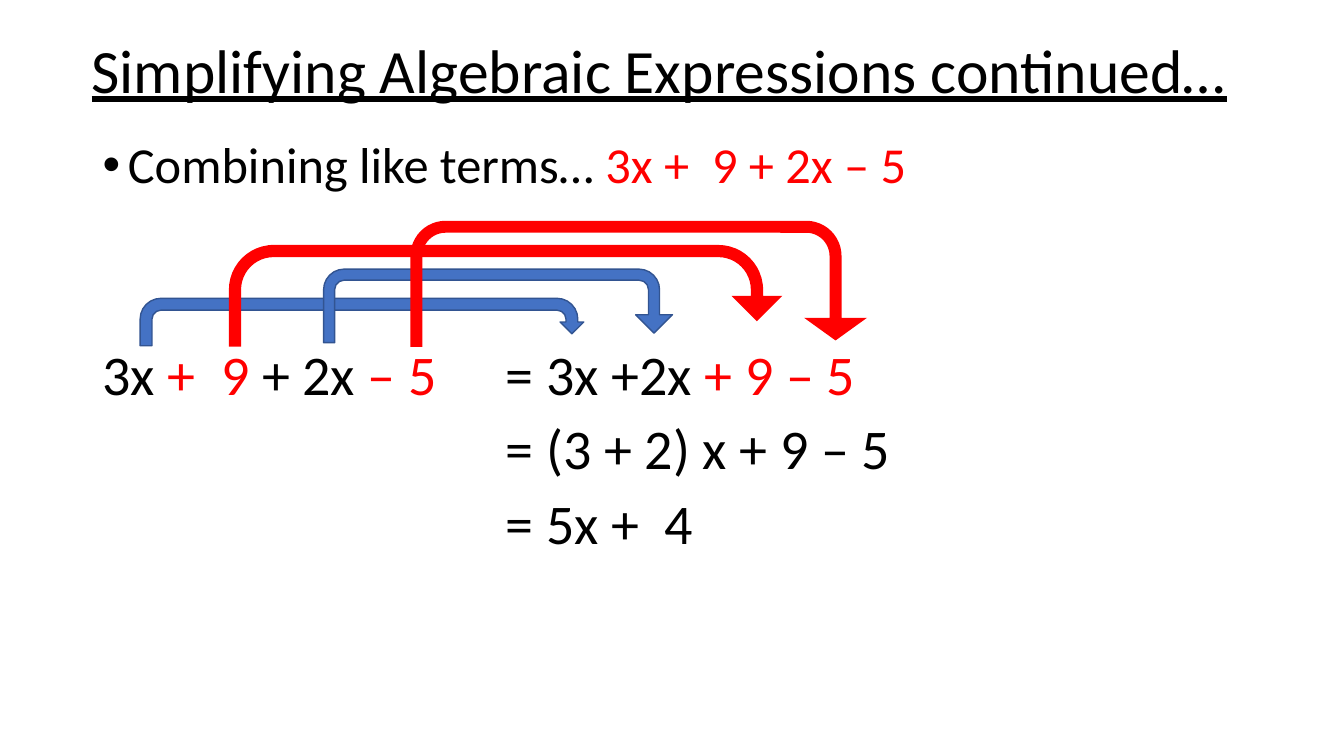
from dataclasses import dataclass

from lxml import etree
from pptx import Presentation
from pptx.dml.color import RGBColor
from pptx.enum.shapes import MSO_SHAPE
from pptx.enum.text import MSO_ANCHOR, PP_ALIGN
from pptx.oxml.ns import qn
from pptx.util import Inches, Pt

UTURN = MSO_SHAPE.U_TURN_ARROW
TOP = MSO_ANCHOR.TOP
MIDDLE = MSO_ANCHOR.MIDDLE
LEFT = PP_ALIGN.LEFT

BLACK = RGBColor(0x00, 0x00, 0x00)
RED = RGBColor(0xFF, 0x00, 0x00)
BLUE = RGBColor(0x44, 0x72, 0xC4)
DARK_BLUE = RGBColor(0x32, 0x54, 0x91)

EQUALS_TAB = Inches(4)
BULLET_INDENT = Inches(0.25)


@dataclass(frozen=True)
class Line:
    terms: tuple[tuple[str, RGBColor], ...]
    size: int
    before: int = 10
    bulleted: bool = False
    underline: bool = False


@dataclass(frozen=True)
class TermArrow:
    box: tuple[float, float, float, float]
    bends: tuple[float, ...]
    fill: RGBColor
    outline: RGBColor | None = None


TITLE = (Line((("Simplifying Algebraic Expressions continued…", BLACK),), 44, 0, underline=True),)

WORKING = (
    Line((("Combining like terms… ", BLACK), ("3x +  9 + 2x – 5", RED)), 36, 0, bulleted=True),
    Line(
        (
            ("3x ", BLACK),
            ("+  9", RED),
            (" + 2x ", BLACK),
            ("– 5", RED),
            ("\t= 3x +2x ", BLACK),
            ("+ 9 – 5", RED),
        ),
        40,
        109,
    ),
    Line((("\t= (3 + 2) x + 9 – 5", BLACK),), 40),
    Line((("\t= 5x +  4", BLACK),), 40),
)

ARROWS = (
    TermArrow((1.39, 2.96, 4.4, 0.47), (0.25, 0.25, 0.25, 0.44, 0.75), BLUE, DARK_BLUE),
    TermArrow((3.21, 2.67, 3.46, 0.73), (0.15, 0.25, 0.25, 0.28, 0.87), BLUE, DARK_BLUE),
    TermArrow((2.27, 2.43, 5.49, 1.01), (0.12, 0.25, 0.25, 0.44, 0.75), RED),
    TermArrow((4.07, 2.19, 4.53, 1.25), (0.095, 0.25, 0.18, 0.28, 0.95), RED),
)


def apply_format(target, values: dict) -> None:
    for name, value in values.items():
        setattr(target, name, value)


def add_bullet(paragraph) -> None:
    properties = paragraph._p.get_or_add_pPr()
    properties.set("marL", str(BULLET_INDENT))
    properties.set("indent", str(-BULLET_INDENT))
    etree.SubElement(properties, qn("a:buFont"), typeface="Arial")
    etree.SubElement(properties, qn("a:buChar"), char="•")


def add_equals_tab(paragraph) -> None:
    tabs = etree.SubElement(paragraph._p.get_or_add_pPr(), qn("a:tabLst"))
    etree.SubElement(tabs, qn("a:tab"), pos=str(EQUALS_TAB), algn="l")


def add_lines(slide, box: tuple[float, ...], lines: tuple[Line, ...], anchor: MSO_ANCHOR) -> None:
    frame = slide.shapes.add_textbox(*map(Inches, box)).text_frame
    apply_format(frame, {"word_wrap": True, "vertical_anchor": anchor})
    for index, line in enumerate(lines):
        paragraph = frame.add_paragraph() if index else frame.paragraphs[0]
        if line.bulleted:
            add_bullet(paragraph)
        if any("\t" in text for text, _ in line.terms):
            add_equals_tab(paragraph)
        apply_format(
            paragraph,
            {"alignment": LEFT, "line_spacing": 0.9, "space_before": Pt(line.before)},
        )
        for text, color in line.terms:
            run = paragraph.add_run()
            run.text = text
            apply_format(
                run.font,
                {"name": "Calibri", "size": Pt(line.size), "underline": line.underline},
            )
            run.font.color.rgb = color


def add_term_arrow(slide, arrow: TermArrow) -> None:
    shape = slide.shapes.add_shape(UTURN, *map(Inches, arrow.box))
    shape.shadow.inherit = False
    for index, bend in enumerate(arrow.bends):
        shape.adjustments[index] = bend
    shape.fill.solid()
    shape.fill.fore_color.rgb = arrow.fill
    if arrow.outline is None:
        shape.line.fill.background()
    else:
        shape.line.color.rgb = arrow.outline
        shape.line.width = Pt(1)


def main() -> None:
    deck = Presentation()
    apply_format(deck, {"slide_width": Inches(13.33), "slide_height": Inches(7.5)})
    slide = deck.slides.add_slide(deck.slide_layouts[6])
    add_lines(slide, (0.81, 0, 12.34, 1.45), TITLE, MIDDLE)
    add_lines(slide, (0.92, 1.34, 11.5, 5.7), WORKING, TOP)
    for arrow in ARROWS:
        add_term_arrow(slide, arrow)
    deck.save("out.pptx")


if __name__ == "__main__":
    main()
